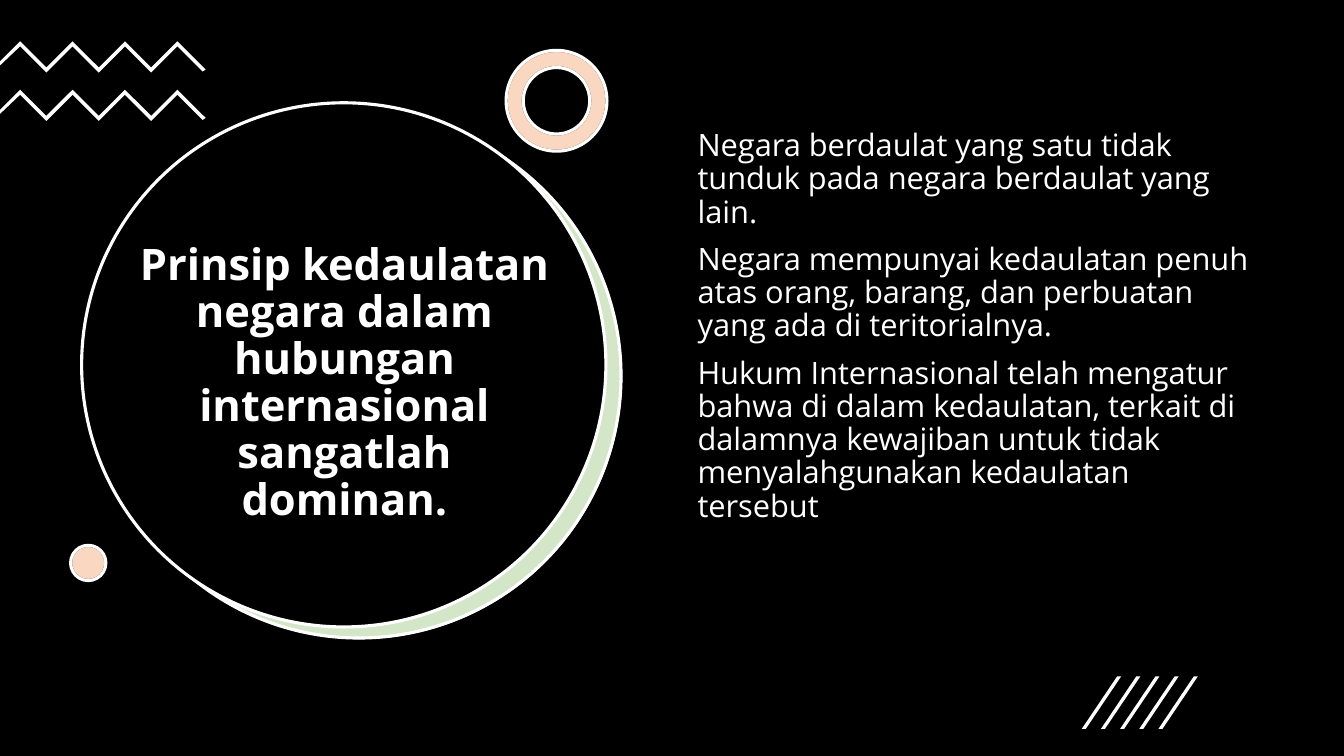
"""Build the slide on the principle of state sovereignty."""
from dataclasses import dataclass

import lxml.etree
import pptx
import pptx.dml.color
import pptx.enum.shapes
import pptx.enum.text
import pptx.oxml.ns
import pptx.util

Inches = pptx.util.Inches
ShapeType = pptx.enum.shapes.MSO_SHAPE
Align = pptx.enum.text.PP_ALIGN
Anchor = pptx.enum.text.MSO_ANCHOR
Point = tuple[float, float]


@dataclass(frozen=True)
class Theme:
    black: str = "000000"
    white: str = "FFFFFF"
    green: str = "70AD47"
    orange: str = "ED7D31"
    font: str = "Open Sans"
    title_size: float = 31
    body_size: float = 22
    outline: float = 2.25
    line_spacing: float = 0.9
    paragraph_gap: float = 10


@dataclass(frozen=True)
class Figure:
    kind: ShapeType
    left: float
    top: float
    width: float
    height: float
    fill: str
    line: str | None = None
    opacity: int = 100
    adjustment: float | None = None


THEME = Theme()
TITLE = "Prinsip kedaulatan negara dalam hubungan internasional sangatlah dominan."
PRINCIPLES = [
    "Negara berdaulat yang satu tidak tunduk pada negara berdaulat yang lain.",
    "Negara mempunyai kedaulatan penuh atas orang, barang, dan perbuatan yang ada di teritorialnya.",
    "Hukum Internasional telah mengatur bahwa di dalam kedaulatan, terkait di dalamnya kewajiban "
    "untuk tidak menyalahgunakan kedaulatan tersebut",
]


def tinted_pair(kind: ShapeType, left: float, top: float, size: float,
                adjustment: float | None = None) -> list[Figure]:
    """Return a white base and the translucent orange figure over it."""
    box = (kind, left, top, size, size)
    return [
        Figure(*box, THEME.white, THEME.black, adjustment=adjustment),
        Figure(*box, THEME.orange, THEME.white, 30, adjustment),
    ]


BACKDROP = [
    Figure(ShapeType.RECTANGLE, 0, 0, 13.33, 7.5, THEME.black),
    Figure(ShapeType.OVAL, 0.97, 1.14, 5.2, 5.2, THEME.white),
    Figure(ShapeType.OVAL, 0.96, 1.13, 5.2, 5.2, THEME.green, THEME.white, 30),
    Figure(ShapeType.OVAL, 0.81, 1.02, 5.2, 5.2, THEME.black, THEME.white),
]
ACCENTS = [
    *tinted_pair(ShapeType.DONUT, 5.02, 0.5, 1, 0.17),
    *tinted_pair(ShapeType.OVAL, 0.7, 5.41, 0.35),
]


def color(value: str) -> pptx.dml.color.RGBColor:
    """Turn a hexadecimal value into a colour."""
    return pptx.dml.color.RGBColor.from_string(value)


def paint(shape, fill: str, line: str | None = None, opacity: int = 100) -> None:
    """Set fill, outline and opacity, and remove the shadow."""
    shape.shadow.inherit = False
    shape.fill.solid()
    shape.fill.fore_color.rgb = color(fill)
    if opacity < 100:
        qualified = pptx.oxml.ns.qn
        fill_color = shape.element.spPr.find(qualified("a:solidFill")).find(qualified("a:srgbClr"))
        lxml.etree.SubElement(fill_color, qualified("a:alpha"), val=str(opacity * 1000))
    if line is None:
        shape.line.fill.background()
    else:
        shape.line.color.rgb = color(line)
        shape.line.width = pptx.util.Pt(THEME.outline)


def add_figure(slide, figure: Figure) -> None:
    """Draw one preset shape."""
    box = (Inches(length) for length in (figure.left, figure.top, figure.width, figure.height))
    shape = slide.shapes.add_shape(figure.kind, *box)
    if figure.adjustment is not None:
        shape.adjustments[0] = figure.adjustment
    paint(shape, figure.fill, figure.line, figure.opacity)


def add_outline(slide, points: list[Point]) -> None:
    """Draw a closed white polygon."""
    corners = [(Inches(x), Inches(y)) for x, y in points]
    builder = slide.shapes.build_freeform(*corners[0], scale=1.0)
    builder.add_line_segments(corners[1:], close=True)
    paint(builder.convert_to_shape(), THEME.white)


def add_zigzag(slide, top: float) -> None:
    """Draw a zigzag band that enters from the left edge."""
    ridge = [(0.2 + 0.26 * index, top + 0.26 * (index % 2)) for index in range(7)]
    underside = [(x, y + 0.05) for x, y in reversed(ridge)]
    right_end = [(2.04, top + 0.28), (2.01, top + 0.3)]
    left_end = [(0, top + 0.24), (0, top + 0.2)]
    add_outline(slide, ridge + right_end + underside + left_end)


def add_slash(slide, left: float) -> None:
    """Draw one slanted stroke."""
    top, bottom, thickness, slant = 6.71, 7.23, 0.04, 0.35
    add_outline(slide, [(left + thickness, bottom), (left, bottom),
                        (left + slant, top), (left + slant + thickness, top)])


def add_text(slide, paragraphs: list[str], *, left: float, top: float, width: float,
             height: float, size: float, bold: bool = False,
             align: Align = Align.LEFT, anchor: Anchor = Anchor.TOP) -> None:
    """Add a wrapped text box with one format for all paragraphs."""
    box = (Inches(length) for length in (left, top, width, height))
    frame = slide.shapes.add_textbox(*box).text_frame
    frame.word_wrap = True
    frame.vertical_anchor = anchor
    for index, text in enumerate(paragraphs):
        paragraph = frame.add_paragraph() if index else frame.paragraphs[0]
        paragraph.alignment = align
        paragraph.line_spacing = THEME.line_spacing
        if index:
            paragraph.space_before = pptx.util.Pt(THEME.paragraph_gap)
        run = paragraph.add_run()
        run.text = text
        run.font.name = THEME.font
        run.font.size = pptx.util.Pt(size)
        run.font.bold = bold
        run.font.color.rgb = color(THEME.white)


def main() -> None:
    """Build and save the presentation."""
    presentation = pptx.Presentation()
    presentation.slide_width = Inches(13.33)
    presentation.slide_height = Inches(7.5)
    slide = presentation.slides.add_slide(presentation.slide_layouts[6])
    for figure in BACKDROP:
        add_figure(slide, figure)
    add_text(slide, [TITLE], left=1.21, top=2.05, width=4.41, height=3.52,
             size=THEME.title_size, bold=True, align=Align.CENTER, anchor=Anchor.MIDDLE)
    for top in (0.41, 0.89):
        add_zigzag(slide, top)
    for figure in ACCENTS:
        add_figure(slide, figure)
    add_text(slide, PRINCIPLES, left=6.82, top=1.24, width=5.71, height=4.76,
             size=THEME.body_size)
    for index in range(5):
        add_slash(slide, 10.73 + 0.19 * index)
    presentation.save("out.pptx")


if __name__ == "__main__":
    main()
